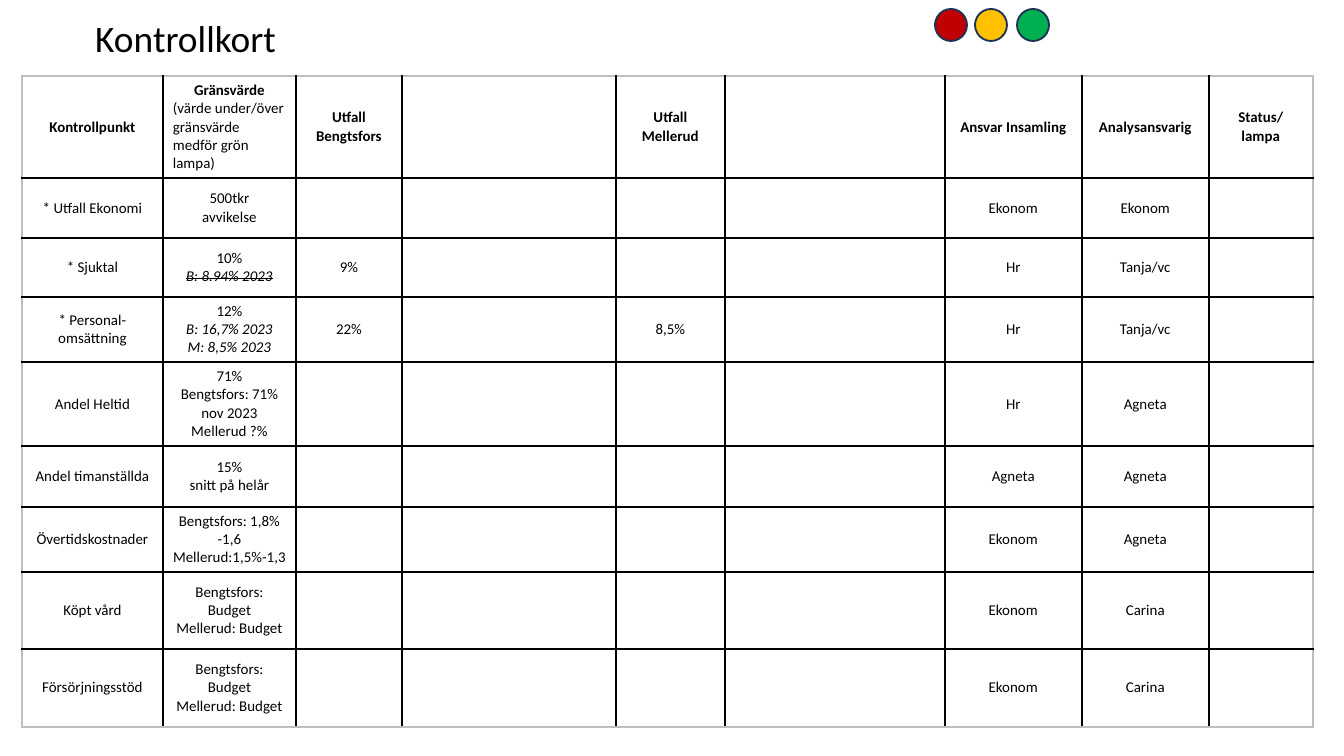
from lxml import etree
from pptx import Presentation
from pptx.dml.color import RGBColor
from pptx.enum.shapes import MSO_SHAPE
from pptx.enum.text import MSO_ANCHOR, PP_ALIGN
from pptx.oxml.ns import qn
from pptx.util import Emu, Pt

CIRCLE = MSO_SHAPE.FLOWCHART_CONNECTOR
MIDDLE = MSO_ANCHOR.MIDDLE
LEFT, CENTER = PP_ALIGN.LEFT, PP_ALIGN.CENTER

BLACK = RGBColor(0x00, 0x00, 0x00)
GRAY = RGBColor(0xBF, 0xBF, 0xBF)
NAVY = RGBColor(0x1E, 0x32, 0x56)
RED = RGBColor(0xC0, 0x00, 0x00)
YELLOW = RGBColor(0xFF, 0xC0, 0x00)
GREEN = RGBColor(0x00, 0xB0, 0x50)
FONT = "Calibri"

# Content: each cell is a text, one paragraph per line
TITLE = "Kontrollkort"
HEADER = [
    "Kontrollpunkt",
    "Gränsvärde\n(värde under/över gränsvärde medför grön lampa)",
    "Utfall\nBengtsfors", "", "Utfall Mellerud", "",
    "Ansvar Insamling", "Analysansvarig", "Status/ lampa",
]
# Check point, limit, outcome Bengtsfors, outcome Mellerud, collector, analyst
CHECKS = [
    ("* Utfall Ekonomi", "500tkr\navvikelse", "", "", "Ekonom", "Ekonom"),
    ("* Sjuktal", "10%\nB: 8.94% 2023", "9%", "", "Hr", "Tanja/vc"),
    ("* Personal-omsättning", "12%\nB: 16,7% 2023\nM: 8,5% 2023",
     "22%", "8,5%", "Hr", "Tanja/vc"),
    ("Andel Heltid", "71%\nBengtsfors: 71% nov 2023\nMellerud ?%",
     "", "", "Hr", "Agneta"),
    ("Andel timanställda", "15%\nsnitt på helår", "", "", "Agneta", "Agneta"),
    ("Övertidskostnader", "Bengtsfors: 1,8% -1,6\nMellerud:1,5%-1,3",
     "", "", "Ekonom", "Agneta"),
    ("Köpt vård", "Bengtsfors: Budget\nMellerud: Budget",
     "", "", "Ekonom", "Carina"),
    ("Försörjningsstöd", "Bengtsfors: Budget\nMellerud: Budget",
     "", "", "Ekonom", "Carina"),
]
ROWS = [HEADER] + [
    [point, limit, bengtsfors, "", mellerud, "", collector, analyst, ""]
    for point, limit, bengtsfors, mellerud, collector, analyst in CHECKS
]
ITALIC = {"B: 8.94% 2023", "B: 16,7% 2023", "M: 8,5% 2023"}
STRUCK = {"B: 8.94% 2023"}
LAMPS = [(935, RED), (975, YELLOW), (1017, GREEN)]

# Layout in px
COL_W = [141, 133, 106, 214, 109, 220, 137, 127, 104]
ROW_H = [102, 60, 59, 65, 84, 61, 65, 77, 78]
TABLE_X, TABLE_Y = 22, 76
LAMP_Y, LAMP_D = 9, 32


def px(n):
    return Emu(round(n * 914400 / 134.4))


def style(p, size, bold=False):
    p.font.name, p.font.size, p.font.bold = FONT, Pt(size), bold
    p.font.color.rgb = BLACK


def set_borders(cell, row, col):
    outer = {"a:lnL": col == 0, "a:lnR": col == len(COL_W) - 1,
             "a:lnT": row == 0, "a:lnB": row == len(ROW_H) - 1}
    tc_pr = cell._tc.get_or_add_tcPr()
    for i, (tag, is_outer) in enumerate(outer.items()):
        ln = etree.Element(qn(tag), w=str(Pt(1)))
        fill = etree.SubElement(ln, qn("a:solidFill"))
        etree.SubElement(fill, qn("a:srgbClr"),
                         val=str(GRAY if is_outer else BLACK))
        tc_pr.insert(i, ln)


def fill_cell(cell, text, row, col):
    cell.fill.background()
    cell.vertical_anchor = MIDDLE
    cell.margin_left = cell.margin_right = px(10)
    cell.margin_top = cell.margin_bottom = px(5)
    tf = cell.text_frame
    tf.text = text
    for p in tf.paragraphs:
        note = p.text.startswith("(")
        p.alignment = LEFT if note else CENTER
        style(p, 8, bold=row == 0 and not note)
        if p.text in ITALIC:
            p.font.italic = True
        if p.text in STRUCK:
            p.runs[0].font._element.set("strike", "sngStrike")
    set_borders(cell, row, col)


prs = Presentation()
prs.slide_width, prs.slide_height = px(1344), px(756)
s = prs.slides.add_slide(prs.slide_layouts[6])

# Title
tf = s.shapes.add_textbox(px(82), px(9), px(731), px(62)).text_frame
tf.word_wrap = True
tf.vertical_anchor = MIDDLE
p = tf.paragraphs[0]
p.text = TITLE
p.line_spacing = 0.9
style(p, 20)

# Control table
table = s.shapes.add_table(len(ROW_H), len(COL_W), px(TABLE_X), px(TABLE_Y),
                           px(sum(COL_W)), px(sum(ROW_H))).table
table.first_row = table.horz_banding = False
for column, width in zip(table.columns, COL_W):
    column.width = px(width)
for r, (texts, height) in enumerate(zip(ROWS, ROW_H)):
    table.rows[r].height = px(height)
    for c, text in enumerate(texts):
        fill_cell(table.cell(r, c), text, r, c)

# Status lamps
for x, color in LAMPS:
    sp = s.shapes.add_shape(CIRCLE, px(x), px(LAMP_Y), px(LAMP_D), px(LAMP_D))
    sp.shadow.inherit = False
    sp.fill.solid()
    sp.fill.fore_color.rgb = color
    sp.line.color.rgb = NAVY
    sp.line.width = Pt(1)

prs.save("out.pptx")
